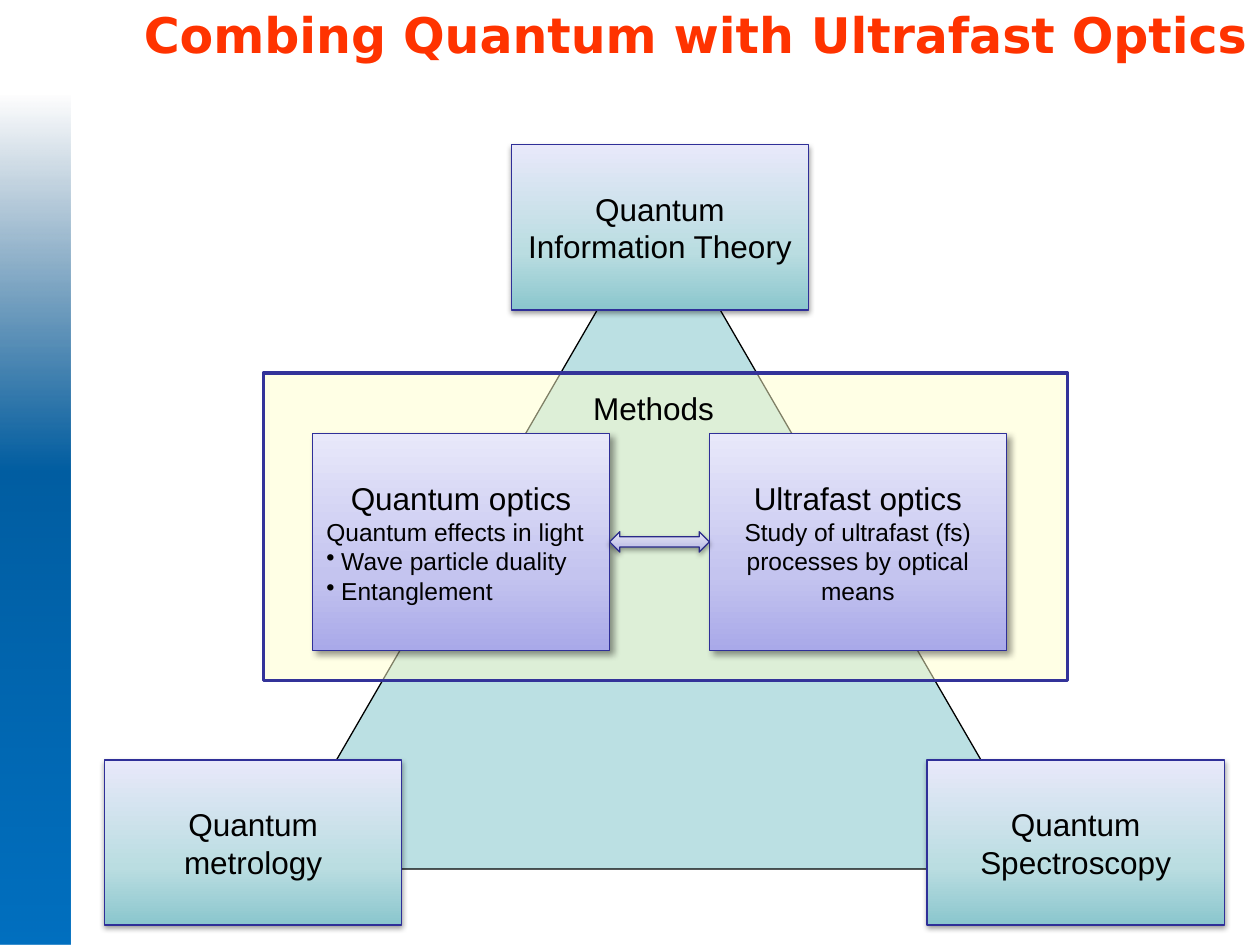
from lxml.etree import SubElement
from pptx import Presentation
from pptx.dml.color import RGBColor
from pptx.enum.shapes import MSO_SHAPE
from pptx.enum.text import MSO_ANCHOR, PP_ALIGN
from pptx.oxml.ns import qn
from pptx.util import Cm, Pt

TITLE = "Combing Quantum with Ultrafast Optics"
PANEL_LABEL = "Methods"
CENTER, LEFT, BULLET = "center", "left", "bullet"

# left, top, lines of (text, size, style)
THEORY_BOXES = [
    (10.31, 2.92, [("Quantum Information Theory", 18, CENTER)]),
    (2.11, 15.32, [("Quantum metrology", 18, CENTER)]),
    (18.69, 15.32, [("Quantum Spectroscopy", 18, CENTER)]),
]
METHOD_TOP = 8.74
METHOD_BOXES = [
    (6.3, METHOD_TOP, [
        ("Quantum optics", 18, CENTER),
        ("Quantum effects in light", 14, LEFT),
        ("Wave particle duality", 14, BULLET),
        ("Entanglement", 14, BULLET),
    ]),
    (14.3, METHOD_TOP, [
        ("Ultrafast optics", 18, CENTER),
        ("Study of ultrafast (fs) processes by optical means", 14, CENTER),
    ]),
]
BOX_WIDTH, THEORY_HEIGHT, METHOD_HEIGHT = 5.99, 3.33, 4.37
ARROW_HEIGHT = 0.41
SIDE_MARGIN = 0.28

BLACK = RGBColor(0x00, 0x00, 0x00)
TITLE_RED = RGBColor(0xFF, 0x33, 0x00)
TRIANGLE_TEAL = RGBColor(0xBB, 0xE0, 0xE3)
PANEL_YELLOW = RGBColor(0xFF, 0xFF, 0xCC)
PANEL_BLUE = RGBColor(0x33, 0x33, 0x99)
BOX_BLUE = RGBColor(0x2F, 0x2F, 0x98)
ARROW_BLUE = RGBColor(0x2A, 0x2A, 0x89)

# position %, colour, opacity %
BAR_STOPS = [(10, RGBColor(0x00, 0x42, 0x72), 0),
             (50, RGBColor(0x00, 0x5E, 0xA2), 100),
             (100, RGBColor(0x00, 0x70, 0xC0), 100)]
THEORY_STOPS = [(0, RGBColor(0x8A, 0xC6, 0xCD), 100),
                (35, RGBColor(0xBA, 0xDD, 0xE1), 100),
                (100, RGBColor(0xE8, 0xE8, 0xFA), 100)]
METHOD_STOPS = [(0, RGBColor(0xA9, 0xA9, 0xE9), 100),
                (35, RGBColor(0xC4, 0xC4, 0xEF), 100),
                (100, RGBColor(0xE8, 0xE8, 0xFA), 100)]
ARROW_STOPS = [(0, RGBColor(0xAD, 0xAD, 0xE1), 100),
               (35, RGBColor(0xC6, 0xC6, 0xE9), 100),
               (100, RGBColor(0xE9, 0xE9, 0xF7), 100)]

# opacity %, blur pt, distance pt, angle
SOFT_SHADOW = (38, 3.1, 1.6, 90)
DEEP_SHADOW = (40, 4, 3, 45)


def add_color(parent, color, opacity):
    element = SubElement(parent, qn("a:srgbClr"), val=str(color))
    if opacity < 100:
        SubElement(element, qn("a:alpha"), val=str(opacity * 1000))


def add_shape(slide, kind, left, top, width, height, line=None, weight=0.75):
    shape = slide.shapes.add_shape(kind, Cm(left), Cm(top), Cm(width), Cm(height))
    shape.shadow.inherit = False
    if line is None:
        shape.line.fill.background()
    else:
        shape.line.color.rgb = line
        shape.line.width = Pt(weight)
    return shape


def set_solid(shape, color, opacity=100):
    shape.fill.solid()
    shape.fill.fore_color.rgb = color
    if opacity < 100:
        element = shape.fill._xPr.find(qn("a:solidFill"))[0]
        SubElement(element, qn("a:alpha"), val=str(opacity * 1000))


def set_gradient(shape, stops, angle):
    """Fill with any number of stops; the angle runs clockwise from the right."""
    shape.fill.gradient()
    gradient = shape._element.spPr.find(qn("a:gradFill"))
    for child in list(gradient):
        gradient.remove(child)
    stop_list = SubElement(gradient, qn("a:gsLst"))
    for position, color, opacity in stops:
        stop = SubElement(stop_list, qn("a:gs"), pos=str(position * 1000))
        add_color(stop, color, opacity)
    SubElement(gradient, qn("a:lin"), ang=str(angle * 60000), scaled="0")


def set_shadow(shape, opacity, blur, distance, angle):
    effects = shape._element.spPr.find(qn("a:effectLst"))
    shadow = SubElement(effects, qn("a:outerShdw"), blurRad=str(Pt(blur)),
                        dist=str(Pt(distance)), dir=str(angle * 60000),
                        rotWithShape="0")
    add_color(shadow, BLACK, opacity)


def set_font(paragraph, name, size, color, bold=False):
    for run in paragraph.runs:
        run.font.name = name
        run.font.size = Pt(size)
        run.font.color.rgb = color
        run.font.bold = bold


def write_lines(shape, lines):
    frame = shape.text_frame
    frame.word_wrap = True
    frame.vertical_anchor = MSO_ANCHOR.MIDDLE
    frame.margin_left = frame.margin_right = Cm(SIDE_MARGIN)
    frame.text = "\n".join(text for text, _, _ in lines)
    for paragraph, (_, size, style) in zip(frame.paragraphs, lines):
        paragraph.alignment = PP_ALIGN.CENTER if style == CENTER else PP_ALIGN.LEFT
        if style == BULLET:
            properties = paragraph._p.get_or_add_pPr()
            properties.set("marL", str(Cm(0.3)))
            properties.set("indent", str(-Cm(0.3)))
            SubElement(properties, qn("a:buChar"), char="•")
        set_font(paragraph, "Arial", size, BLACK)


def add_boxes(slide, boxes, height, stops, shadow):
    for left, top, lines in boxes:
        box = add_shape(slide, MSO_SHAPE.RECTANGLE, left, top, BOX_WIDTH, height, BOX_BLUE)
        set_gradient(box, stops, 270)
        set_shadow(box, *shadow)
        write_lines(box, lines)


def add_title(slide):
    title = slide.shapes.title
    title.left, title.top, title.width, title.height = Cm(2.9), Cm(0), Cm(22.5), Cm(1.57)
    frame = title.text_frame
    frame.margin_left = frame.margin_right = frame.margin_bottom = 0
    frame.margin_top = Cm(0.1)
    frame.vertical_anchor = MSO_ANCHOR.TOP
    frame.text = TITLE
    frame.paragraphs[0].alignment = PP_ALIGN.LEFT
    set_font(frame.paragraphs[0], "DejaVu Sans", 28, TITLE_RED, bold=True)


def add_panel_label(slide):
    label = slide.shapes.add_textbox(Cm(11.71), Cm(7.72), Cm(2.97), Cm(1.02))
    label.text_frame.word_wrap = False
    label.text_frame.text = PANEL_LABEL
    set_font(label.text_frame.paragraphs[0], "Arial", 18, BLACK)


def add_method_arrow(slide):
    """Span the gap between the two method boxes at their middle height."""
    left = METHOD_BOXES[0][0] + BOX_WIDTH
    top = METHOD_TOP + (METHOD_HEIGHT - ARROW_HEIGHT) / 2
    arrow = add_shape(slide, MSO_SHAPE.LEFT_RIGHT_ARROW, left, top,
                      METHOD_BOXES[1][0] - left, ARROW_HEIGHT, ARROW_BLUE)
    set_gradient(arrow, ARROW_STOPS, 270)
    set_shadow(arrow, *SOFT_SHADOW)


def main():
    presentation = Presentation()
    presentation.slide_width, presentation.slide_height = Cm(25.4), Cm(19.05)
    slide = presentation.slides.add_slide(presentation.slide_layouts[5])
    add_title(slide)

    bar = add_shape(slide, MSO_SHAPE.RECTANGLE, 0, 0, 1.42, 19.05)
    set_gradient(bar, BAR_STOPS, 90)
    triangle = add_shape(slide, MSO_SHAPE.ISOSCELES_TRIANGLE, 5.51, 4.11, 15.54, 13.41, BLACK)
    set_solid(triangle, TRIANGLE_TEAL)
    panel = add_shape(slide, MSO_SHAPE.RECTANGLE, 5.31, 7.52, 16.21, 6.2, PANEL_BLUE, 2)
    set_solid(panel, PANEL_YELLOW, 50)

    add_boxes(slide, METHOD_BOXES, METHOD_HEIGHT, METHOD_STOPS, DEEP_SHADOW)
    add_boxes(slide, THEORY_BOXES, THEORY_HEIGHT, THEORY_STOPS, SOFT_SHADOW)
    add_panel_label(slide)
    add_method_arrow(slide)
    presentation.save("out.pptx")


if __name__ == "__main__":
    main()
